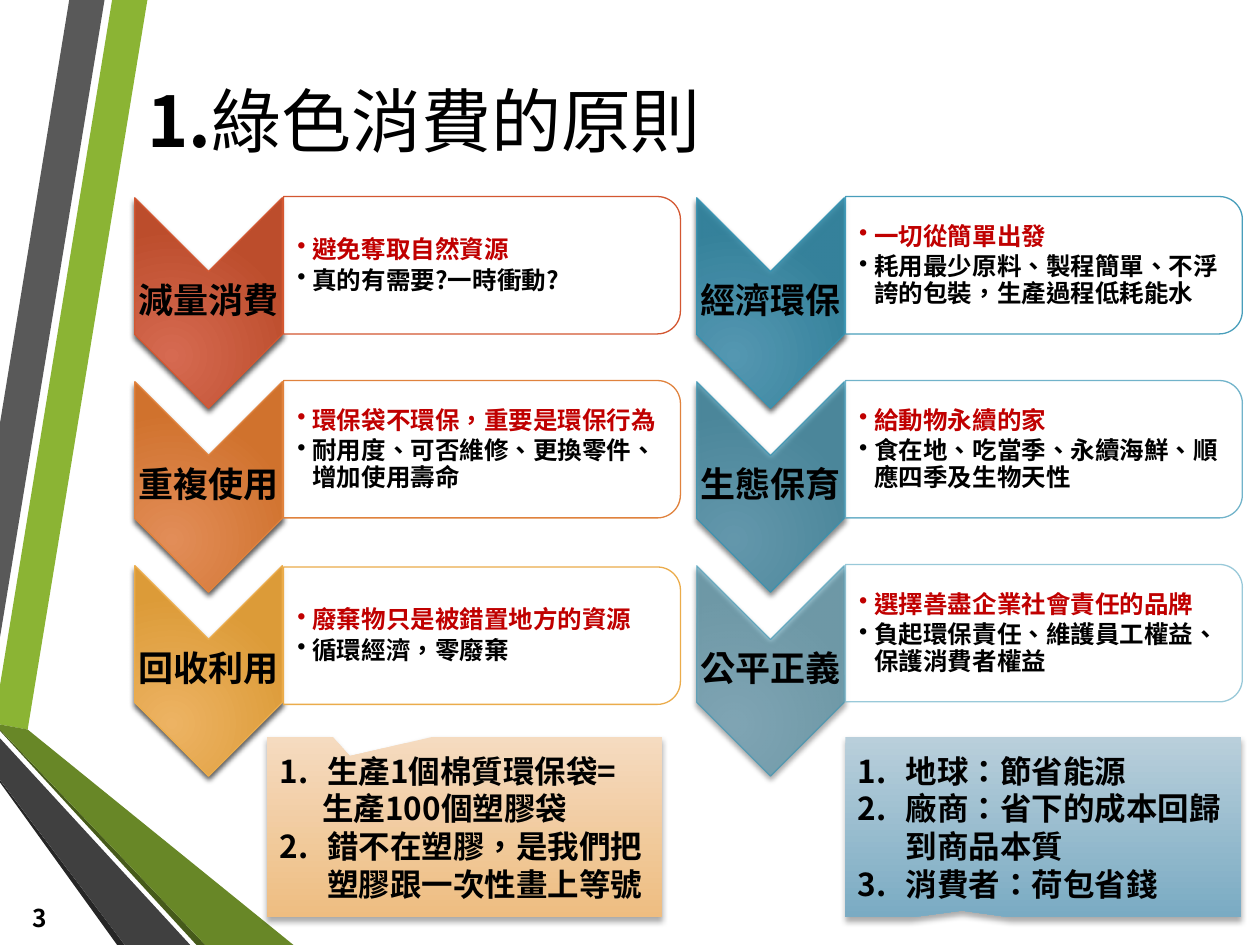
"""Build a slide on the six principles of green consumption."""
from lxml.etree import SubElement
from pptx import Presentation
from pptx.dml.color import RGBColor as RGB
from pptx.enum.shapes import MSO_SHAPE as SHAPE
from pptx.enum.text import MSO_ANCHOR as ANCHOR, PP_ALIGN as ALIGN
from pptx.oxml.ns import qn
from pptx.util import Inches, Pt

THEME = {
    "font": "Noto Sans CJK SC", "lang": "zh-TW",
    "text": "000000", "accent": "C00000", "panel": "FFFFFF",
    "title": 40, "label": 20, "callout": 18, "body": 14,
}
TITLE = [("1.", True), ("綠色消費的原則", False)]
PAGE = "3"
BANDS = [
    ("8BB434", [(0, 5.44), (0, 5.75), (0.22, 5.79), (1.17, 0), (0.89, 0)]),
    ("595959", [(0.83, 0), (0.55, 0), (0, 3.36), (0, 5.06)]),
    ("262626", [(0, 6.19), (0, 6.21), (0.93, 7.5), (0.99, 7.5)]),
    ("465A1A", [(0, 5.79), (0, 5.8), (1.56, 7.5), (1.63, 7.5)]),
    ("688727", [(0, 5.79), (1.63, 7.5), (2.33, 7.5), (0.22, 5.79), (0, 5.75)]),
    ("404040", [(0, 6.19), (0.99, 7.5), (1.51, 7.5), (0, 5.86)]),
]
BLUE = ("529CB9", "2F84A0", "3594B4")
COLUMNS = [
    (1.07, [
        ("減量消費", "避免奪取自然資源", "真的有需要?一時衝動?",
         ("D66A51", "BC4D2C", "D35731"), 100, 0),
        ("重複使用", "環保袋不環保，重要是環保行為", "耐用度、可否維修、更換零件、增加使用壽命",
         ("E28D58", "D0722D", "E0823D"), 100, 0),
        ("回收利用", "廢棄物只是被錯置地方的資源", "循環經濟，零廢棄",
         ("EDB363", "DC9B38", "EBAC4B"), 100, 0.02),
    ]),
    (5.53, [
        ("經濟環保", "一切從簡單出發", "耗用最少原料、製程簡單、不浮誇的包裝，生產過程低耗能水", BLUE, 90, 0),
        ("生態保育", "給動物永續的家", "食在地、吃當季、永續海鮮、順應四季及生物天性", BLUE, 70, 0),
        ("公平正義", "選擇善盡企業社會責任的品牌", "負起環保責任、維護員工權益、保護消費者權益", BLUE, 50, 0),
    ]),
]
CALLOUTS = [
    (2.12, (-0.291, -0.394), ("F5DBC0", "EEBD81"),
     [(1, "生產1個棉質環保袋="), (None, "生產100個塑膠袋"),
      (2, "錯不在塑膠，是我們把塑膠跟一次性畫上等號")]),
    (6.71, (-0.205, 0.463), ("B9CFDB", "7AABC3"),
     [(1, "地球：節省能源"), (2, "廠商：省下的成本回歸到商品本質"), (3, "消費者：荷包省錢")]),
]
TOP, PITCH = 1.57, 1.46
ARROW_W, ARROW_H = 1.17, 1.67
PANEL_W, PANEL_H = 3.15, 1.09


def assign(obj, values):
    for name, value in values.items():
        setattr(obj, name, value)


def add_run(p, text, size, color=THEME["text"], bold=True):
    r = p.add_run()
    r.text = text
    assign(r.font, {"name": THEME["font"], "size": Pt(size), "bold": bold})
    r.font.color.rgb = RGB.from_string(color)
    rpr = r._r.get_or_add_rPr()
    rpr.set("lang", THEME["lang"])
    SubElement(rpr, qn("a:ea"), typeface=THEME["font"])


def setup(tf, inset=None):
    assign(tf, {"word_wrap": True, "vertical_anchor": ANCHOR.MIDDLE})
    if inset:
        sides = ("margin_left", "margin_top", "margin_right", "margin_bottom")
        assign(tf, dict(zip(sides, map(Inches, inset))))
    return tf


def paragraph(tf, index):
    return tf.paragraphs[0] if index == 0 else tf.add_paragraph()


def bullet(p, left, hang, tag, **attrs):
    ppr = p._p.get_or_add_pPr()
    ppr.set("marL", str(Inches(left)))
    ppr.set("indent", str(-Inches(hang)))
    SubElement(ppr, qn(tag), **attrs)


def text_box(s, x, y, w, h, inset=None):
    return setup(s.shapes.add_textbox(*map(Inches, (x, y, w, h))).text_frame, inset)


def add_shape(s, kind, x, y, w, h):
    sp = s.shapes.add_shape(kind, *map(Inches, (x, y, w, h)))
    sp.shadow.inherit = False
    return sp


def turned_shape(s, kind, x, y, w, h):
    sp = add_shape(s, kind, x + (w - h) / 2, y + (h - w) / 2, h, w)
    sp.rotation = 90
    return sp


def outline(sp, color):
    sp.line.color.rgb = RGB.from_string(color)
    sp.line.width = Pt(0.75)


def gradient(sp, colors):
    sp.fill.gradient()
    sp.fill.gradient_angle = 270
    for stop, color, position in zip(sp.fill.gradient_stops, colors, (0, 1)):
        stop.color.rgb = RGB.from_string(color)
        stop.position = position


def radial(sp):
    grad = sp._element.spPr.find(qn("a:gradFill"))
    grad.remove(grad.find(qn("a:lin")))
    focus = SubElement(grad, qn("a:path"), path="circle")
    SubElement(focus, qn("a:fillToRect"), l="50000", t="100000", r="100000", b="50000")


def fade(element, percent):
    if percent < 100:
        for color in element.iter(qn("a:srgbClr")):
            SubElement(color, qn("a:alpha"), val=str(percent * 1000))


def cast_shadow(sp, percent, blur, distance):
    effects = sp._element.spPr.find(qn("a:effectLst"))
    shadow = SubElement(effects, qn("a:outerShdw"), blurRad=str(Pt(blur)),
                        dist=str(Pt(distance)), dir="5400000", rotWithShape="0")
    SubElement(shadow, qn("a:srgbClr"), val="000000")
    fade(shadow, percent)


def add_band(s, color, points):
    corners = [(Inches(x), Inches(y)) for x, y in points]
    builder = s.shapes.build_freeform(*corners[0])
    builder.add_line_segments(corners[1:], close=True)
    sp = builder.convert_to_shape()
    sp.shadow.inherit = False
    sp.fill.solid()
    sp.fill.fore_color.rgb = RGB.from_string(color)
    sp.line.fill.background()


def add_callout(s, x, tip, colors, items):
    sp = add_shape(s, SHAPE.RECTANGULAR_CALLOUT, x, 5.85, 3.14, 1.43)
    sp.adjustments[0], sp.adjustments[1] = tip
    gradient(sp, colors)
    sp.line.fill.background()
    cast_shadow(sp, 32, 3.5, 2.2)
    tf = setup(sp.text_frame)
    for i, (number, text) in enumerate(items):
        p = paragraph(tf, i)
        p.alignment = ALIGN.LEFT
        if number:
            bullet(p, 0.38, 0.38, "a:buAutoNum", type="arabicPeriod", startAt=str(number))
        else:
            bullet(p, 0.34, 0, "a:buNone")
        add_run(p, text, THEME["callout"])


def add_principle(s, x, y, label, lead, detail, colors, opacity, nudge):
    arrow = turned_shape(s, SHAPE.CHEVRON, x, y, ARROW_W, ARROW_H)
    gradient(arrow, colors[:2])
    radial(arrow)
    outline(arrow, colors[2])
    fade(arrow._element.spPr, opacity)
    cast_shadow(arrow, 64, 3, 2)
    p = text_box(s, x, y + 0.58, ARROW_W, 0.5, [0.01] * 4).paragraphs[0]
    assign(p, {"alignment": ALIGN.CENTER, "line_spacing": 0.9})
    add_run(p, label, THEME["label"])

    left, top = x + ARROW_W + 0.01, y + nudge - 0.01
    panel = turned_shape(s, SHAPE.ROUND_2_SAME_RECTANGLE, left, top, PANEL_W, PANEL_H)
    panel.fill.solid()
    panel.fill.fore_color.rgb = RGB.from_string(THEME["panel"])
    outline(panel, colors[2])
    fade(panel._element.spPr.find(qn("a:solidFill")), 90)
    fade(panel._element.spPr.find(qn("a:ln")), opacity)
    tf = text_box(s, left, top + 0.06, 3.1, 0.98, (0.11, 0.01, 0.01, 0.01))
    for i, (text, color) in enumerate([(lead, THEME["accent"]), (detail, THEME["text"])]):
        p = paragraph(tf, i)
        bullet(p, 0.12, 0.12, "a:buChar", char="•")
        assign(p, {"line_spacing": 0.9, "space_after": Pt(2.3)})
        add_run(p, text, THEME["body"], color)


def main():
    prs = Presentation()
    assign(prs, {"slide_width": Inches(10), "slide_height": Inches(7.5)})
    s = prs.slides.add_slide(prs.slide_layouts[5])
    title = s.shapes.title
    box = zip(("left", "top", "width", "height"), map(Inches, (1.07, 0.5, 8.43, 0.89)))
    assign(title, dict(box))
    p = setup(title.text_frame).paragraphs[0]
    p.alignment = ALIGN.LEFT
    for text, bold in TITLE:
        add_run(p, text, THEME["title"], bold=bold)
    for band in BANDS:
        add_band(s, *band)
    for callout in CALLOUTS:
        add_callout(s, *callout)
    p = text_box(s, 0, 7.08, 0.47, 0.4).paragraphs[0]
    p.alignment = ALIGN.RIGHT
    add_run(p, PAGE, THEME["body"])
    for x, principles in COLUMNS:
        for row, principle in enumerate(principles):
            add_principle(s, x, TOP + row * PITCH, *principle)
    prs.save("out.pptx")


if __name__ == "__main__":
    main()
